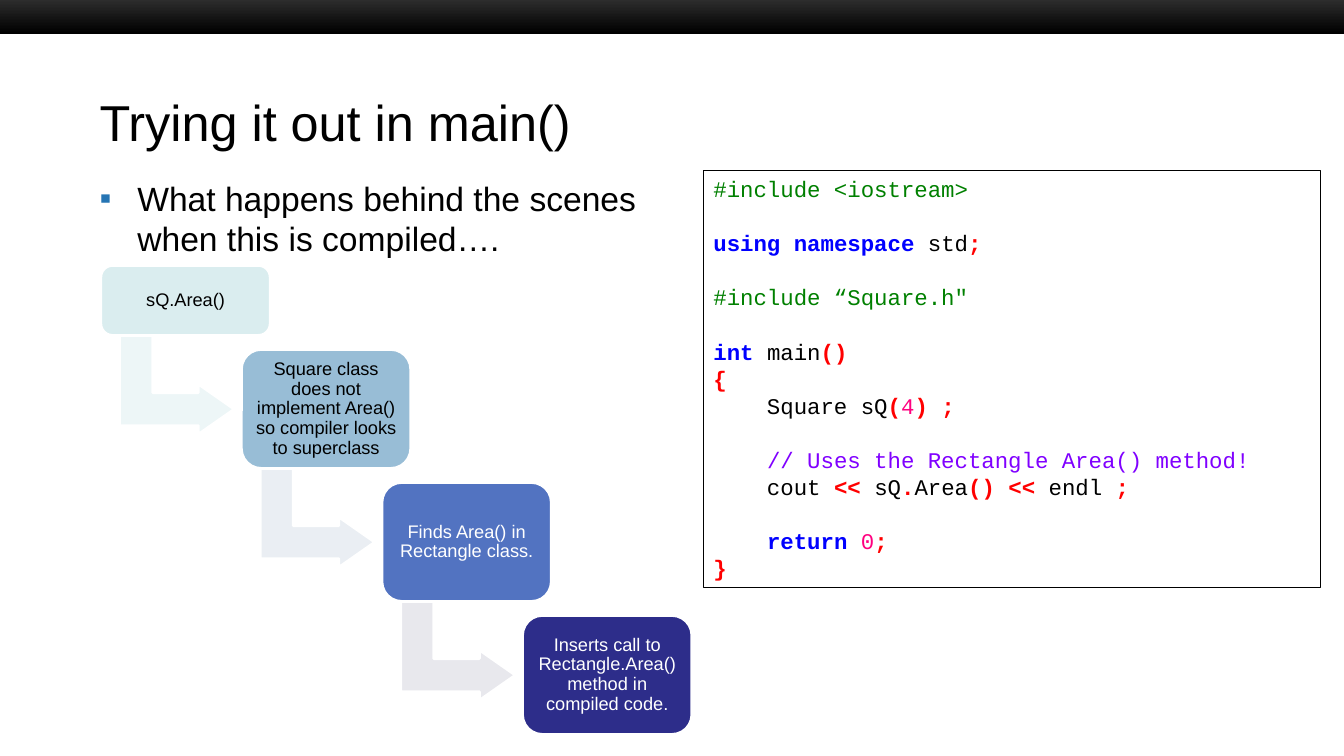
from lxml import etree
from pptx import Presentation, util as u
from pptx.dml import color
from pptx.enum import shapes, text
from pptx.oxml import ns

Pt = u.Pt
BLACK, WHITE = "000000", "FFFFFF"
MONO = {"name": "Courier New", "size": Pt(16)}
PITCH = 19.3

# Colour and weight of each kind of code token
TOKENS = {
    "pre": ("008000", False),
    "key": ("0000FF", True),
    "sym": ("FF0000", True),
    "num": ("FF0080", False),
    "rem": ("8000FF", False),
    "txt": (BLACK, False),
}

# An empty entry is an empty line of code
CODE = [
    [("pre", "#include <iostream>")],
    [],
    [("key", "using"), ("txt", " "), ("key", "namespace"), ("txt", " std"), ("sym", ";")],
    [],
    [("pre", "#include “Square.h\"")],
    [],
    [("key", "int"), ("txt", " main"), ("sym", "()")],
    [("sym", "{")],
    [("txt", "    Square sQ"), ("sym", "("), ("num", "4"), ("sym", ")"),
     ("txt", " "), ("sym", ";")],
    [],
    [("txt", "    "), ("rem", "// Uses the Rectangle Area() method!")],
    [("txt", "    cout "), ("sym", "<<"), ("txt", " sQ"), ("sym", "."), ("txt", "Area"),
     ("sym", "()"), ("txt", " "), ("sym", "<<"), ("txt", " endl "), ("sym", ";")],
    [],
    [("txt", "    "), ("key", "return"), ("txt", " "), ("num", "0"), ("sym", ";")],
    [("sym", "}")],
]

# Text, height, fill, text colour, colour of the arrow to the next step
STEPS = [
    ("sQ.Area()", 50, "DAEDEF", BLACK, "EDF6F7"),
    ("Square class does not implement Area() so compiler looks to superclass",
     85, "98BDD6", BLACK, "EAEEF3"),
    ("Finds Area() in Rectangle class.", 85, "5273C1", WHITE, "E8E8ED"),
    ("Inserts call to Rectangle.Area() method in compiled code.",
     85, "2D2D8A", WHITE, None),
]


def rgb(code):
    return color.RGBColor.from_string(code)


def assign(target, values):
    for name, value in values.items():
        setattr(target, name, value)


class Deck:
    def __init__(self):
        self.show = Presentation()
        assign(self.show, {"slide_width": Pt(960), "slide_height": Pt(540)})
        self.slide = self.show.slides.add_slide(self.show.slide_layouts[6])
        self.font = {"name": "Arial"}

    def shape(self, kind, box, fill=None, line=None, width=2, adjust=()):
        item = self.slide.shapes.add_shape(kind, *map(Pt, box))
        item.shadow.inherit = False
        for i, value in enumerate(adjust):
            item.adjustments[i] = value
        if fill:
            item.fill.solid()
            item.fill.fore_color.rgb = rgb(fill)
        else:
            item.fill.background()
        if line:
            item.line.color.rgb = rgb(line)
            item.line.width = Pt(width)
        else:
            item.line.fill.background()
        return item

    def run(self, para, words, tone=BLACK, **font):
        run = para.add_run()
        run.text = words
        assign(run.font, {**self.font, **font})
        run.font.color.rgb = rgb(tone)

    def label(self, box, words, size, **frame):
        """Add a text box with one paragraph, and return the paragraph."""
        item = self.slide.shapes.add_textbox(*map(Pt, box)).text_frame
        assign(item, {"word_wrap": True, **frame})
        para = item.paragraphs[0]
        self.run(para, words, size=Pt(size))
        return para

    def bullet(self, para, sign, tone, indent):
        props = para._p.get_or_add_pPr()
        props.set("marL", str(Pt(indent)))
        props.set("indent", str(-Pt(indent)))
        hue = etree.SubElement(props, ns.qn("a:buClr"))
        etree.SubElement(hue, ns.qn("a:srgbClr"), val=tone)
        etree.SubElement(props, ns.qn("a:buFont"), typeface="Arial")
        etree.SubElement(props, ns.qn("a:buChar"), char=sign)

    def bar(self, box, start, end):
        item = self.shape(shapes.MSO_SHAPE.RECTANGLE, box)
        item.fill.gradient()
        item.fill.gradient_angle = 270
        for stop, tone, place in zip(item.fill.gradient_stops, (start, end), (0, 1)):
            stop.color.rgb = rgb(tone)
            stop.position = place

    def code(self, box, lines):
        item = self.shape(shapes.MSO_SHAPE.RECTANGLE, box, line=BLACK, width=0.75)
        frame = item.text_frame
        assign(frame, {"word_wrap": True, "vertical_anchor": text.MSO_ANCHOR.TOP})
        para, gap = frame.paragraphs[0], 0
        for i, line in enumerate(lines):
            if not line:
                gap += PITCH
                continue
            if i:
                para = frame.add_paragraph()
            assign(para, {"alignment": text.PP_ALIGN.LEFT, "line_spacing": Pt(PITCH),
                          "space_before": Pt(gap)})
            gap = 0
            for kind, words in line:
                tone, bold = TOKENS[kind]
                self.run(para, words, tone, bold=bold, **MONO)

    def card(self, box, words, fill, tone):
        item = self.shape(shapes.MSO_SHAPE.ROUNDED_RECTANGLE, box, fill, WHITE,
                          adjust=[0.167])
        frame = item.text_frame
        sides = ("left", "right", "top", "bottom")
        assign(frame, {f"margin_{side}": Pt(3.6) for side in sides})
        assign(frame, {"word_wrap": True, "vertical_anchor": text.MSO_ANCHOR.MIDDLE})
        para = frame.paragraphs[0]
        assign(para, {"alignment": text.PP_ALIGN.CENTER, "line_spacing": 0.9})
        self.run(para, words, tone, size=Pt(13))

    def arrow(self, box, fill):
        item = self.shape(shapes.MSO_SHAPE.BENT_UP_ARROW, box, fill, WHITE,
                          adjust=[0.328, 0.25, 0.358])
        item.rotation = 90

    def stairs(self, left, base, across, down):
        """Draw the steps; base is the bottom edge of the first card."""
        for i, (words, height, fill, tone, next_fill) in enumerate(STEPS):
            x, y = left + i * across, base + i * down
            if next_fill:
                self.arrow((x + 18.4, y - 6.3, 72, 82), next_fill)
            self.card((x, y - height, 121, height), words, fill, tone)


def main():
    deck = Deck()
    deck.bar((0, -3.6, 960, 27.6), "333333", BLACK)
    deck.label((64, 60, 832, 54), "Trying it out in main()", 36,
               vertical_anchor=text.MSO_ANCHOR.MIDDLE)
    para = deck.label((64, 121.7, 425.5, 76.3),
                      "What happens behind the scenes when this is compiled….", 24,
                      margin_top=Pt(5.6))
    para.line_spacing = Pt(28.6)
    deck.bullet(para, "▪", "2675B4", 27)
    deck.code((502.5, 121.7, 440.6, 298), CODE)
    deck.stairs(72, 239.6, 100.4, 95)
    deck.show.save("out.pptx")


if __name__ == "__main__":
    main()
